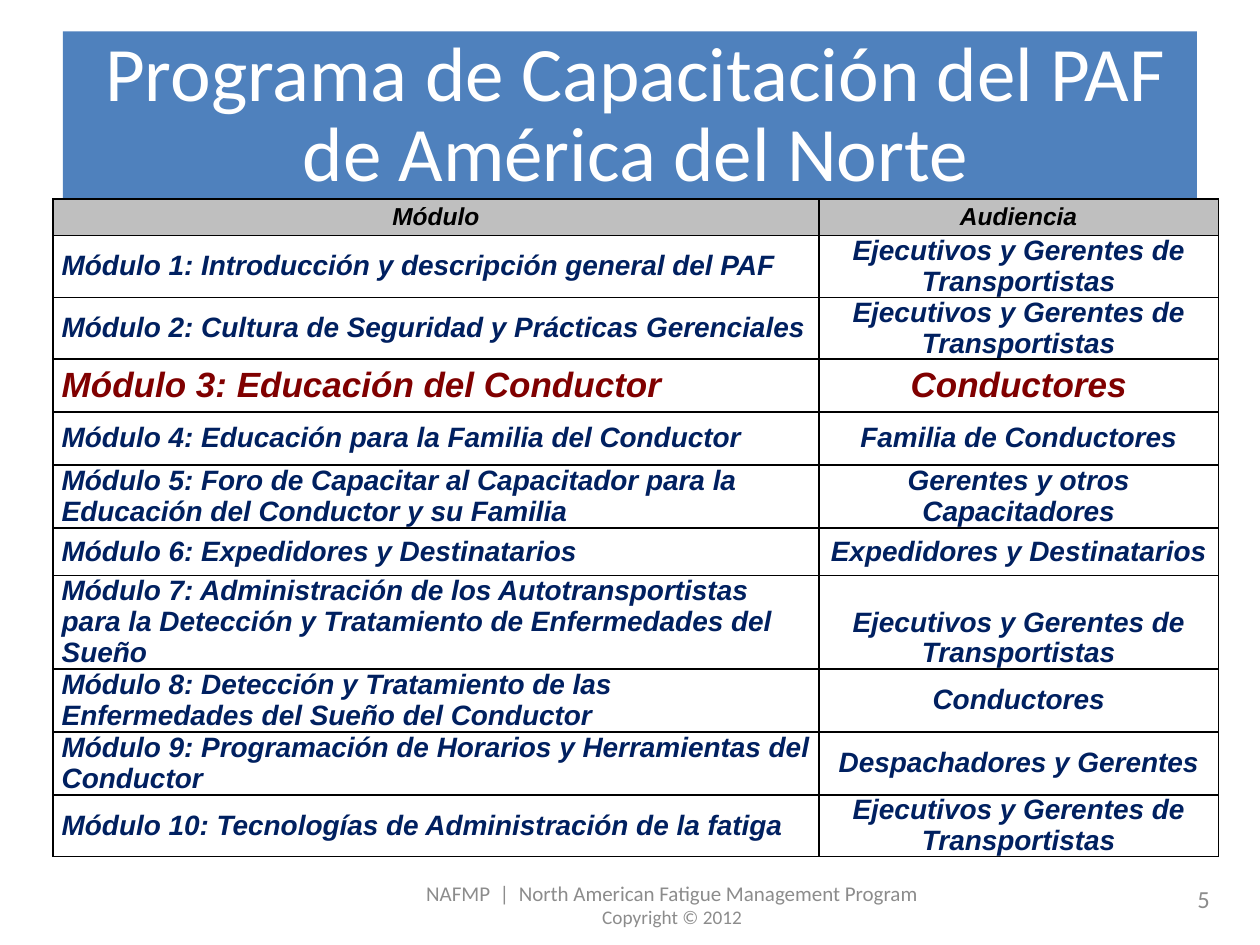
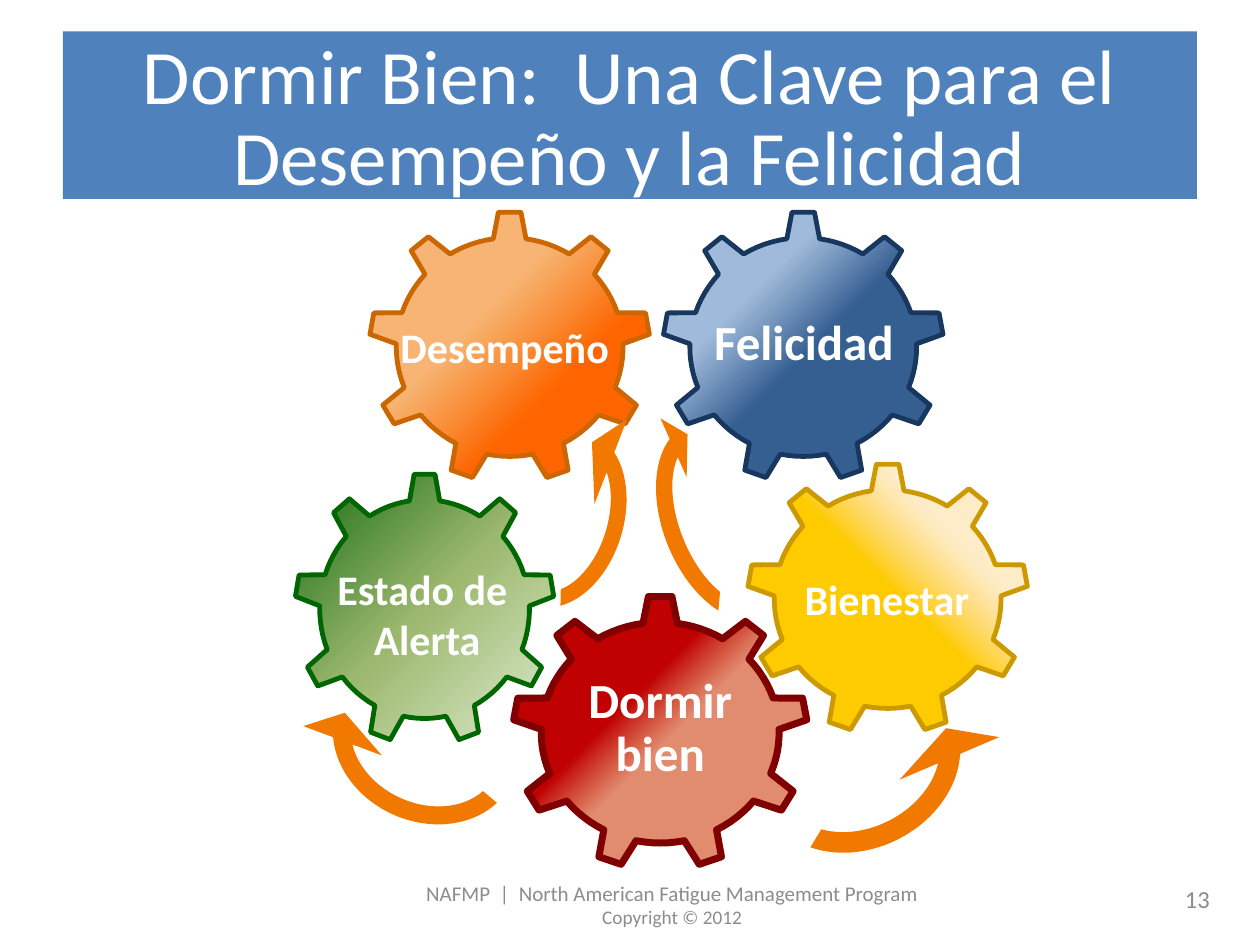
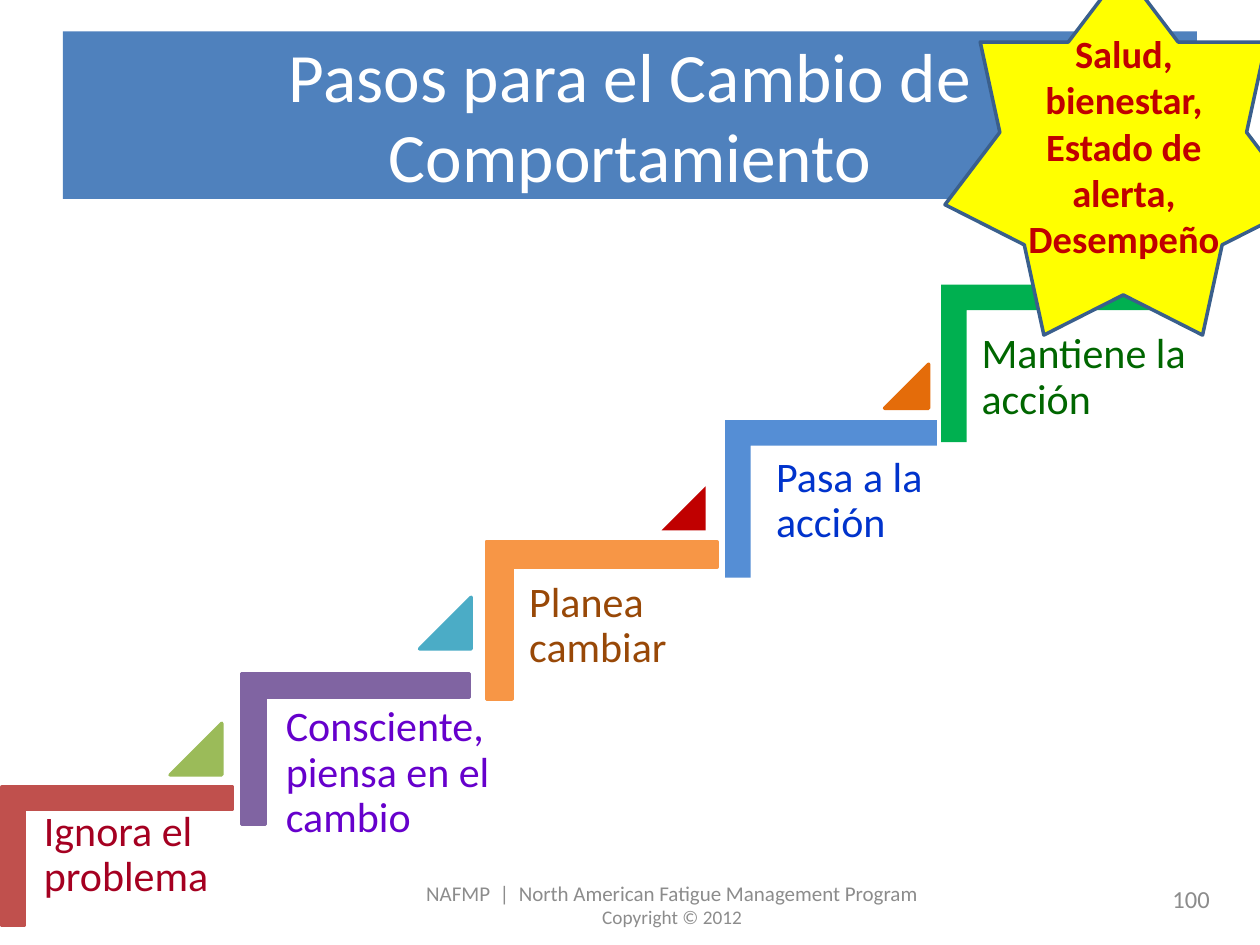
from math import cos, radians, sin

from lxml.etree import SubElement
from pptx import Presentation
from pptx.dml.color import RGBColor
from pptx.enum.shapes import MSO_SHAPE as Shape
from pptx.enum.text import MSO_ANCHOR as Anchor, PP_ALIGN as Align
from pptx.oxml.ns import qn
from pptx.util import Inches, Pt

BLUE = "4F81BD"
WHITE = "FFFFFF"
BLACK = "000000"
FOOTER_GRAY = "8C8C8C"
HEADER_GRAY = "BFBFBF"
NAVY = "002060"
MAROON = "800000"
ARROW_ORANGE = "F27900"

MANAGERS = "Ejecutivos y Gerentes de Transportistas"
MODULES = [
    ("Módulo", "Audiencia", 0.29),
    ("Módulo 1: Introducción y descripción general del PAF", MANAGERS, 0.49),
    ("Módulo 2: Cultura de Seguridad y Prácticas Gerenciales", MANAGERS, 0.49),
    ("Módulo 3: Educación del Conductor", "Conductores", 0.42),
    ("Módulo 4: Educación para la Familia del Conductor", "Familia de Conductores", 0.42),
    ("Módulo 5: Foro de Capacitar al Capacitador para la Educación del Conductor y su Familia",
     "Gerentes y otros Capacitadores", 0.5),
    ("Módulo 6: Expedidores y Destinatarios", "Expedidores y Destinatarios", 0.38),
    ("Módulo 7: Administración de los Autotransportistas para la Detección y Tratamiento "
     "de Enfermedades del Sueño", MANAGERS, 0.74),
    ("Módulo 8: Detección y Tratamiento de las Enfermedades del Sueño del Conductor",
     "Conductores", 0.5),
    ("Módulo 9: Programación de Horarios y Herramientas del Conductor",
     "Despachadores y Gerentes", 0.5),
    ("Módulo 10: Tecnologías de Administración de la fatiga", MANAGERS, 0.49),
]
HIGHLIGHTED_ROW = 3
BOTTOM_ROW = 7

TO_BOTTOM_RIGHT = dict(l="100000", t="100000")
TO_TOP_RIGHT = dict(l="100000", b="100000")
GEARS = [
    ((2.92, 1.67, 2.25, 2.17), "CC6600", 2.75, TO_BOTTOM_RIGHT,
     [(34, "FF6600", 100), (61, "F27900", 54)],
     ["Desempeño"], (0.16, 0.83, 1.92, 0.5), dict(size=24, align=Align.LEFT)),
    ((4.06, 4.72, 2.36, 2.19), MAROON, 4, TO_BOTTOM_RIGHT,
     [(47, "CC3300", 56), (61, "C00000", 100)],
     ["Dormir bien"], (0.44, 0.57, 1.48, 1), dict(size=28, spacing=0.9, anchor=Anchor.MIDDLE)),
    ((2.33, 3.75, 2.08, 2.17), "006600", 2.75, TO_BOTTOM_RIGHT,
     [(0, "DDEBCF", 100), (50, "9CB86E", 100), (100, "156B13", 100)],
     ["Estado de ", "Alerta"], (0.24, 0.67, 1.64, 0.91), dict(size=24)),
    ((5.25, 1.67, 2.25, 2.17), "17375E", 2.75, TO_BOTTOM_RIGHT,
     [(48, "376092", 100), (69, "95B3D7", 89)],
     ["Felicidad"], (0.17, 0.75, 1.92, 0.57), dict(size=28)),
    ((5.92, 3.67, 2.25, 2.17), "CC9900", 2.75, TO_TOP_RIGHT,
     [(27, "FFCC66", 35), (48, "FFCC00", 100)],
     ["Bienestar"], (0.16, 0.83, 1.92, 0.5), dict(size=24)),
]
TURN_ARROWS = [
    ((2.36, 5.01, 2.03, 1.77), 204.2, False, (0.081, 11.42, 202.33, 117.46, 0.188)),
    ((5.66, 5.06, 2.34, 2.02), 333.1, True, (0.081, 11.42, 202.33, 127.09, 0.213)),
    ((4.75, 3.45, 2.03, 1.38), 247.9, False, (0.096, 6.95, 207.92, 124.36, 0.185)),
    ((3.45, 3.34, 2.03, 1.56), 287.2, True, (0.081, 11.42, 202.33, 117.46, 0.231)),
]

STEPS = [
    ((0.38, 5.88, 1.1, 1.83), "C0504D", 2),
    ((2.22, 5.04, 1.2, 1.81), "8064A2", 2),
    ((4.15, 4.01, 1.25, 1.83), "F79646", 2),
    ((5.97, 3.12, 1.25, 1.68), "558ED5", 0),
    ((7.88, 1.85, 1.25, 2.07), "00B050", 0),
]
STEP_LABELS = [
    ((0.25, 6.33, 2.15, 1.1), ["Ignora el", "problema"], "A50021", 0.1),
    ((2.17, 5.5, 2.15, 1.88), ["Consciente, piensa en el cambio"], "6600CC", 0.1),
    ((4.08, 4.49, 1.87, 1.64), ["Planea cambiar"], "984807", 0.12),
    ((6.04, 3.5, 1.87, 1.64), ["Pasa a la acción"], "0033CC", 0.12),
    ((7.67, 2.52, 1.87, 1.64), ["Mantiene la acción"], "006600", 0.12),
]
RISERS = [
    ((1.35, 5.74, 0.41, 0.41), "9BBB59", 2),
    ((3.33, 4.74, 0.41, 0.41), "4BACC6", 2),
    ((5.25, 3.86, 0.35, 0.35), "C00000", 0),
    ((7.02, 2.89, 0.35, 0.35), "E46C0A", 2),
]


def rgb(color):
    return RGBColor.from_string(color)


def inches(box):
    return [Inches(length) for length in box]


def write(frame, lines, size=24, color=WHITE, font="Calibri", bold=False, italic=False,
          align=Align.CENTER, spacing=None):
    for index, line in enumerate(lines):
        paragraph = frame.add_paragraph() if index else frame.paragraphs[0]
        paragraph.alignment = align
        if spacing:
            paragraph.line_spacing = spacing
        run = paragraph.add_run()
        run.text = line
        run.font.size = Pt(size)
        run.font.name = font
        run.font.bold = bold
        run.font.italic = italic
        run.font.color.rgb = rgb(color)


def add_text(slide, box, lines, anchor=Anchor.TOP, inset=None, **text_format):
    frame = slide.shapes.add_textbox(*inches(box)).text_frame
    frame.word_wrap = True
    frame.vertical_anchor = anchor
    if inset:
        frame.margin_left = frame.margin_right = Inches(inset)
        frame.margin_top = frame.margin_bottom = Inches(inset)
    write(frame, lines, **text_format)
    return frame


def outline(shape, color, width):
    shape.shadow.inherit = False
    if width:
        shape.line.color.rgb = rgb(color)
        shape.line.width = Pt(width)
    else:
        shape.line.fill.background()


def add_figure(slide, kind, box, fill, line=None, width=0, rotation=0, adjust=()):
    figure = slide.shapes.add_shape(kind, *inches(box))
    figure.fill.solid()
    figure.fill.fore_color.rgb = rgb(fill)
    outline(figure, line or fill, width)
    figure.rotation = rotation
    for index, value in enumerate(adjust):
        figure.adjustments[index] = value
    return figure


def start_slide(deck, title, title_box, number, title_size=44):
    slide = deck.slides.add_slide(deck.slide_layouts[6])
    slide.background.fill.solid()
    slide.background.fill.fore_color.rgb = rgb(WHITE)
    add_figure(slide, Shape.RECTANGLE, (0.5, 0.25, 9, 1.33), BLUE)
    add_footer(slide, (3, 6.93, 6.7, 0.5), number)
    add_text(slide, title_box, [title], size=title_size, spacing=Pt(45.8), anchor=Anchor.MIDDLE)
    return slide


def add_footer(slide, box, number):
    left, top, width, height = box
    credit = add_text(slide, (left, top, 4.67, height),
                      ["NAFMP  |  North American Fatigue Management Program", "Copyright © 2012"],
                      size=12, color=FOOTER_GRAY, anchor=Anchor.MIDDLE)
    credit.paragraphs[1].runs[0].font.size = Pt(11)
    add_text(slide, (left + width - 2.33, top, 2.33, 0.4), [str(number)],
             size=14, color=FOOTER_GRAY, align=Align.RIGHT, anchor=Anchor.MIDDLE)


def add_borders(cell):
    properties = cell._tc.get_or_add_tcPr()
    for index, side in enumerate(("lnL", "lnR", "lnT", "lnB")):
        border = SubElement(properties, qn(f"a:{side}"), w=str(Pt(1)))
        paint = SubElement(border, qn("a:solidFill"))
        SubElement(paint, qn("a:srgbClr"), val=BLACK)
        properties.insert(index, border)


def fill_cell(cell, text, row, column):
    header = row == 0
    size, color, spacing = (14, BLACK, None) if header else (16, NAVY, Pt(17.6))
    if row == HIGHLIGHTED_ROW:
        size, color, spacing = 20, MAROON, None
    cell.margin_left = cell.margin_right = Inches(0.07)
    cell.margin_top = cell.margin_bottom = 0
    cell.vertical_anchor = Anchor.BOTTOM if row == BOTTOM_ROW and column else Anchor.MIDDLE
    if header:
        cell.fill.solid()
        cell.fill.fore_color.rgb = rgb(HEADER_GRAY)
    else:
        cell.fill.background()
    add_borders(cell)
    write(cell.text_frame, [text], size=size, color=color, font="Arial", bold=True, italic=True,
          align=Align.CENTER if header or column else Align.LEFT, spacing=spacing)


def add_module_table(slide, box):
    table = slide.shapes.add_table(len(MODULES), 2, *inches(box)).table
    audience_width = 3.17
    table.columns[0].width = Inches(box[2] - audience_width)
    table.columns[1].width = Inches(audience_width)
    for row, (module, audience, height) in enumerate(MODULES):
        table.rows[row].height = Inches(height)
        for column, text in enumerate((module, audience)):
            fill_cell(table.cell(row, column), text, row, column)


def gear_points(box, teeth=9):
    left, top, width, height = box
    pitch = 360 / teeth
    base_half, tip_half = 8.3, 4.6
    gap = pitch - 2 * base_half
    tooth = [(-base_half, 0.4), (-tip_half, 0.495), (tip_half, 0.495), (base_half, 0.4)]
    valley = [(base_half + gap * step / 6, 0.4) for step in range(1, 6)]
    for index in range(teeth):
        for offset, radius in tooth + valley:
            angle = radians(index * pitch - 90 + offset)
            yield (Inches(left + width * (0.5 + radius * cos(angle))),
                   Inches(top + height * (0.5 + radius * sin(angle))))


def set_gradient(shape, stops, focus):
    shape.fill.background()
    properties = shape._element.spPr
    empty_fill = properties.find(qn("a:noFill"))
    gradient = SubElement(properties, qn("a:gradFill"), rotWithShape="1")
    properties.replace(empty_fill, gradient)
    stop_list = SubElement(gradient, qn("a:gsLst"))
    for position, color, opacity in stops:
        stop = SubElement(stop_list, qn("a:gs"), pos=str(position * 1000))
        tint = SubElement(stop, qn("a:srgbClr"), val=color)
        if opacity < 100:
            SubElement(tint, qn("a:alpha"), val=str(opacity * 1000))
    circle = SubElement(gradient, qn("a:path"), path="circle")
    SubElement(circle, qn("a:fillToRect"), **focus)


def add_gear(slide, box, line, width, focus, stops, label, label_box, label_format):
    start, *rest = gear_points(box)
    builder = slide.shapes.build_freeform(*start)
    builder.add_line_segments(rest, close=True)
    gear = builder.convert_to_shape()
    set_gradient(gear, stops, focus)
    outline(gear, line, width)
    dx, dy, label_width, label_height = label_box
    add_text(slide, (box[0] + dx, box[1] + dy, label_width, label_height), label,
             bold=True, **label_format)


def add_turn_arrow(slide, box, rotation, flipped, adjust):
    arrow = add_figure(slide, Shape.CIRCULAR_ARROW, box, ARROW_ORANGE, rotation=rotation,
                       adjust=adjust)
    if flipped:
        arrow._element.spPr.find(qn("a:xfrm")).set("flipV", "1")


def add_staircase(slide):
    for box, color, width in STEPS:
        add_figure(slide, Shape.CORNER, box, color, width=width, rotation=90,
                   adjust=(0.161, 0.161))
    for box, color, width in RISERS:
        add_figure(slide, Shape.ISOSCELES_TRIANGLE, box, color, width=width, adjust=(1,))
    for box, lines, color, inset in STEP_LABELS:
        add_text(slide, box, lines, color=color, inset=inset, align=Align.LEFT, spacing=0.9)


def add_goal_star(slide, box):
    left, top, width, height = box
    add_figure(slide, Shape.STAR_7_POINT, box, "FFFF00", line="3A5F8C", width=2)
    add_text(slide, (left + 0.34, top + 0.43, 2.16, 1.95),
             ["Salud, bienestar, Estado de alerta, Desempeño"],
             size=22, color="C00000", bold=True)


def main():
    deck = Presentation()
    deck.slide_width, deck.slide_height = Inches(10), Inches(7.5)

    modules = start_slide(deck, "Programa de Capacitación del PAF de América del Norte",
                          (0.42, 0.3, 9.25, 1.25), 5)
    add_module_table(modules, (0.42, 1.58, 9.25, 5.22))

    sleep = start_slide(deck, "Dormir Bien:  Una Clave para el Desempeño y la Felicidad",
                        (0.5, 0.33, 9, 1.25), 13)
    for gear in GEARS:
        add_gear(sleep, *gear)
    for arrow in TURN_ARROWS:
        add_turn_arrow(sleep, *arrow)

    change = start_slide(deck, "Pasos para el Cambio de Comportamiento",
                         (0.5, 0.3, 9, 1.25), 100, title_size=39.6)
    add_staircase(change)
    add_goal_star(change, (7.5, -0.24, 2.83, 2.9))

    deck.save("out.pptx")


if __name__ == "__main__":
    main()
